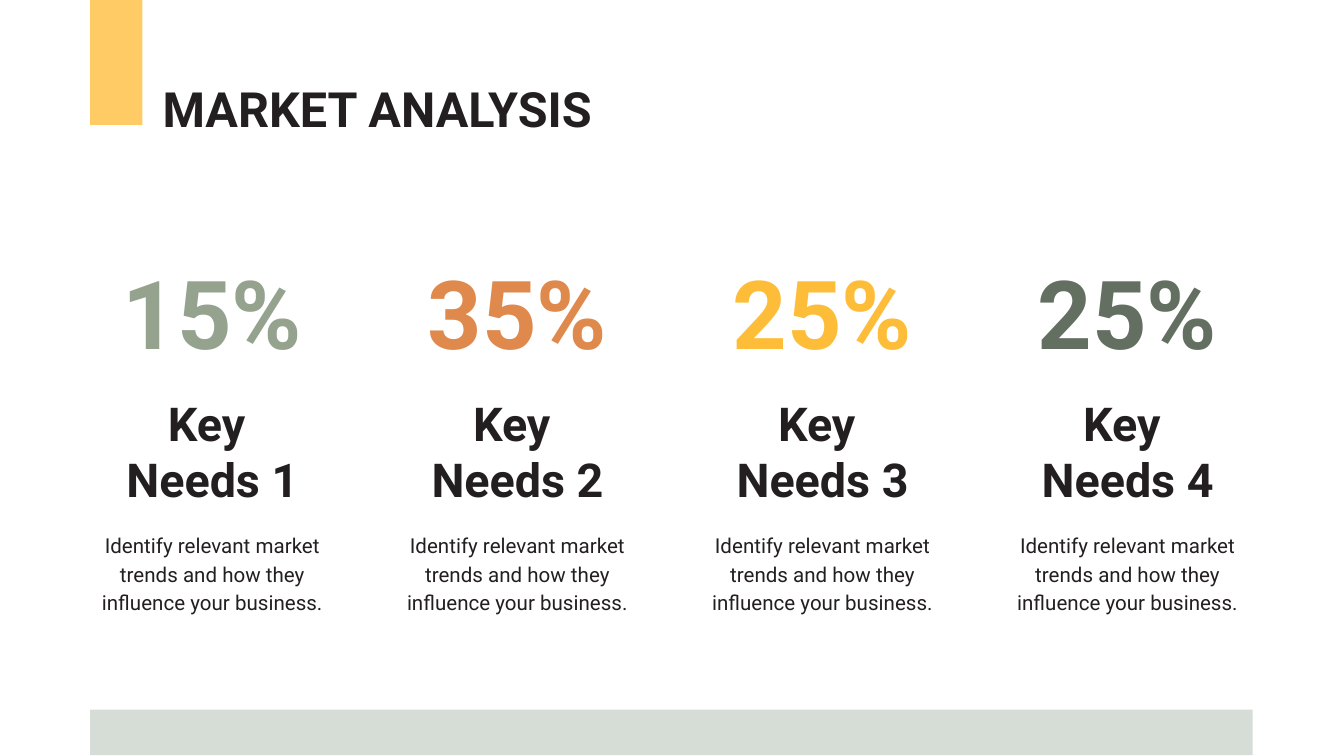
from pptx import Presentation
from pptx.dml.color import RGBColor
from pptx.enum.shapes import MSO_SHAPE as Preset
from pptx.enum.text import MSO_AUTO_SIZE as AutoSize, PP_ALIGN as Align
from pptx.util import Inches, Pt

INK = "231F20"
FIRST_LEFT = 0.87
COLUMN_PITCH = 2.27
NEEDS = [
    ("15%", "94A28E"),
    ("35%", "DF894D"),
    ("25%", "FEBD38"),
    ("25%", "636F61"),
]
DESCRIPTION = "Identify relevant market trends and how they influence your business."


def color(value):
    return RGBColor.from_string(value)


def add_block(slide, left, top, width, height, fill):
    shape = slide.shapes.add_shape(
        Preset.RECTANGLE, Inches(left), Inches(top), Inches(width), Inches(height)
    )
    shape.shadow.inherit = False
    shape.fill.solid()
    shape.fill.fore_color.rgb = color(fill)
    shape.line.fill.background()


def add_text(slide, left, top, width, height, lines, size,
             fill=INK, bold=True, align=Align.CENTER, spacing=None):
    box = slide.shapes.add_textbox(
        Inches(left), Inches(top), Inches(width), Inches(height)
    )
    frame = box.text_frame
    frame.margin_left = frame.margin_right = 0
    frame.margin_top = frame.margin_bottom = 0
    frame.word_wrap = True
    frame.auto_size = AutoSize.SHAPE_TO_FIT_TEXT
    frame.text = "\n".join(lines)
    for paragraph in frame.paragraphs:
        paragraph.alignment = align
        paragraph.line_spacing = spacing
        paragraph.font.name = "Roboto"
        paragraph.font.size = Pt(size)
        paragraph.font.bold = bold
        paragraph.font.color.rgb = color(fill)


def add_need(slide, number, share, fill):
    left = FIRST_LEFT + (number - 1) * COLUMN_PITCH
    add_text(slide, left, 1.89, 1.42, 0.86, [share], 51, fill)
    add_text(slide, left, 2.94, 1.42, 0.84, ["Key ", f"Needs {number}"], 25)
    add_text(slide, left - 0.2, 3.94, 1.82, 0.61, [DESCRIPTION], 11,
             bold=False, spacing=1.15)


def main():
    presentation = Presentation()
    presentation.slide_width = Inches(10)
    presentation.slide_height = Inches(10 * 9 / 16)
    slide = presentation.slides.add_slide(presentation.slide_layouts[6])

    add_block(slide, 0.67, 5.28, 8.65, 0.34, "D6DDD6")
    add_block(slide, 0.67, 0, 0.39, 0.93, "FFCB65")
    add_text(slide, 1.21, 0.59, 4.37, 0.44, ["MARKET ANALYSIS"], 26, align=Align.LEFT)
    for number, (share, fill) in enumerate(NEEDS, start=1):
        add_need(slide, number, share, fill)

    presentation.save("out.pptx")


if __name__ == "__main__":
    main()
